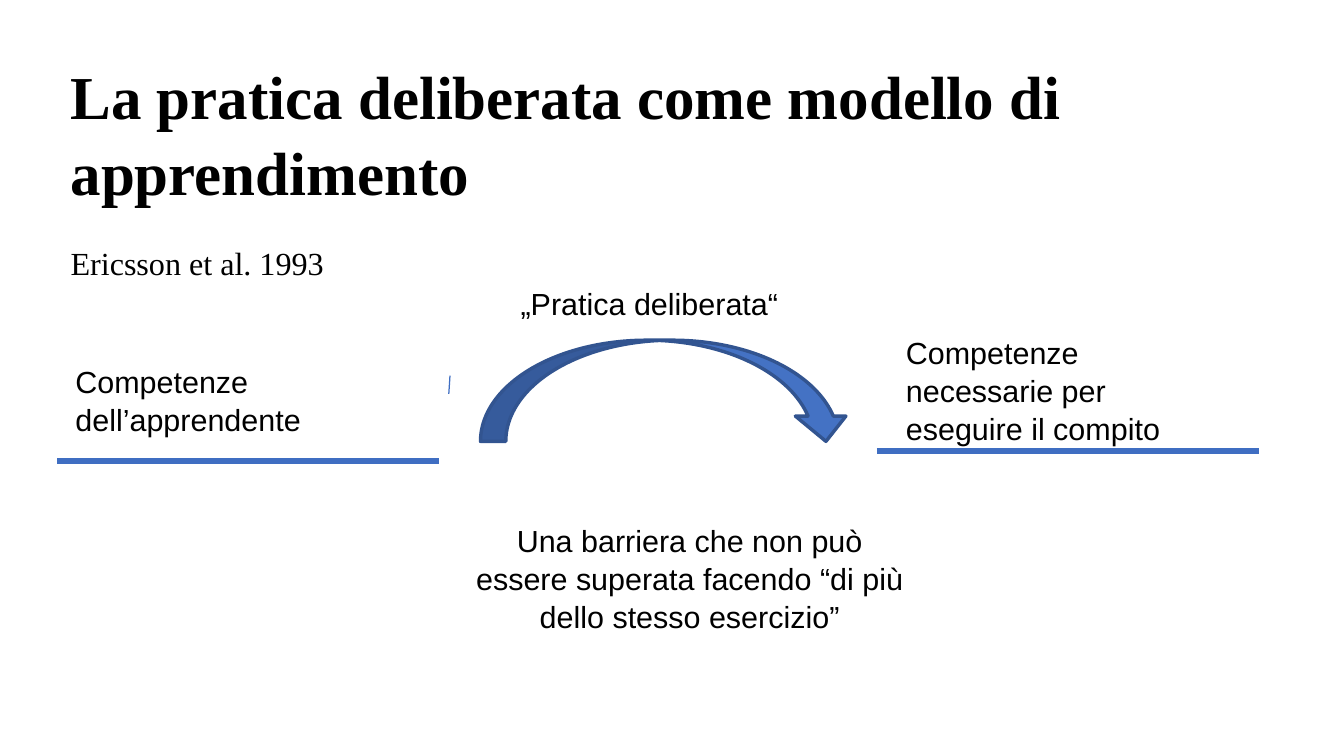
from pptx import Presentation
from pptx.dml.color import RGBColor
from pptx.enum.shapes import MSO_CONNECTOR, MSO_SHAPE
from pptx.enum.text import MSO_ANCHOR, PP_ALIGN
from pptx.oxml.ns import qn
from pptx.util import Inches, Pt
from lxml.etree import SubElement

BLACK, BLUE, RULE, EDGE = "000000", "4472C4", "3F6EC2", "325490"
RULE_LONG = 3.13


def paint(color, value):
    color.rgb = RGBColor.from_string(value)


def add_text(slide, box, lines, align=PP_ALIGN.LEFT, anchor=MSO_ANCHOR.TOP):
    """Each line is (text, size, font, bold, space before)."""
    frame = slide.shapes.add_textbox(*map(Inches, box)).text_frame
    frame.word_wrap = True
    frame.vertical_anchor = anchor
    for i, (text, size, font, bold, gap) in enumerate(lines):
        para = frame.add_paragraph() if i else frame.paragraphs[0]
        para.text = text
        para.alignment = align
        para.line_spacing = 1.04
        para.space_before = Pt(gap)
        para.font.size, para.font.name, para.font.bold = Pt(size), font, bold
        paint(para.font.color, BLACK)


def add_label(slide, box, text, align=PP_ALIGN.LEFT):
    add_text(slide, box, [(text, 18, "Arial", False, 0)], align)


def add_line(slide, start, end, width):
    line = slide.shapes.add_connector(
        MSO_CONNECTOR.STRAIGHT, *map(Inches, start + end))
    line.line.width = Pt(width)
    paint(line.line.color, RULE)
    SubElement(line._element.spPr, qn("a:effectLst"))


def add_level(slide, left, base, box, text):
    """A skill level: a label standing on a thick rule."""
    add_line(slide, (left, base), (left + RULE_LONG, base), 3.5)
    add_label(slide, box, text)


def add_arrow(slide, box):
    arrow = slide.shapes.add_shape(
        MSO_SHAPE.CURVED_DOWN_ARROW, *map(Inches, box))
    arrow.shadow.inherit = False
    arrow.fill.solid()
    paint(arrow.fill.fore_color, BLUE)
    arrow.line.width = Pt(2)
    paint(arrow.line.color, EDGE)


def add_bridge(slide, left, top):
    """The curved arrow between the levels, with its captions."""
    add_label(slide, (left, top, 3.73, 0.4), "„Pratica deliberata“",
              PP_ALIGN.CENTER)
    add_line(slide, (left + 0.23, top + 0.8), (left + 0.22, top + 0.95), 0.75)
    add_arrow(slide, (left + 0.48, top + 0.51, 3.04, 0.83))
    add_label(slide, (left + 0.33, top + 1.94, 3.73, 1),
              "Una barriera che non può essere superata facendo "
              "“di più dello stesso esercizio”", PP_ALIGN.CENTER)


def add_title(slide, box):
    font = "Times New Roman"
    add_text(slide, box, [
        ("La pratica deliberata come modello di apprendimento",
         36, font, True, 0),
        ("Ericsson et al. 1993", 19, font, False, 20),
    ], anchor=MSO_ANCHOR.MIDDLE)


def main():
    deck = Presentation()
    deck.slide_width, deck.slide_height = Inches(11.02), Inches(6.2)
    slide = deck.slides.add_slide(deck.slide_layouts[6])
    add_level(slide, 0.47, 3.78, (0.52, 2.92, 2.86, 0.7),
              "Competenze dell’apprendente")
    add_level(slide, 7.19, 3.7, (7.33, 2.68, 2.86, 1),
              "Competenze necessarie per eseguire il compito")
    add_bridge(slide, 3.46, 2.28)
    add_title(slide, (0.48, 0.49, 9.95, 1.79))
    deck.save("out.pptx")


if __name__ == "__main__":
    main()
